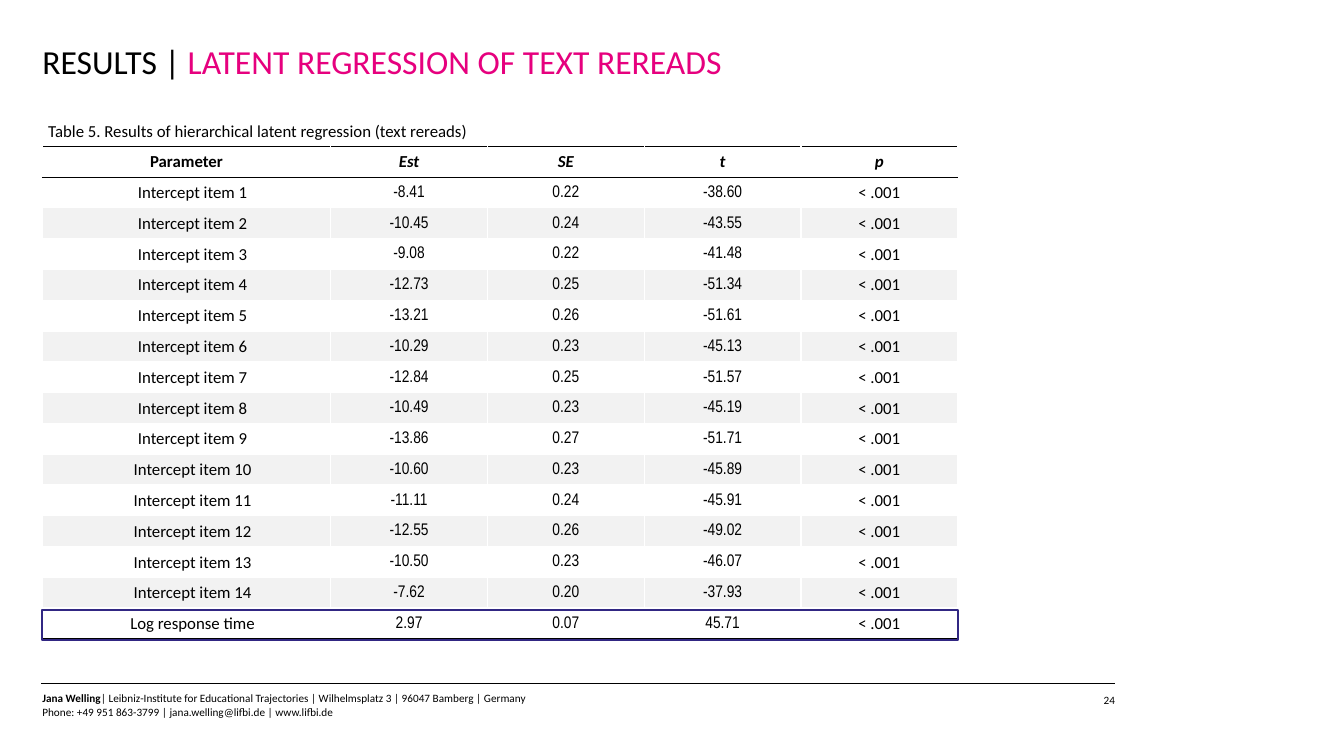
"""Build the results slide on latent regression of text rereads."""
from lxml import etree
from pptx import Presentation
from pptx.dml.color import RGBColor
from pptx.enum.shapes import MSO_CONNECTOR, MSO_SHAPE
from pptx.enum.text import MSO_ANCHOR, PP_ALIGN
from pptx.oxml.ns import qn
from pptx.util import Inches, Pt

LEFT, MID, RIGHT = PP_ALIGN.LEFT, PP_ALIGN.CENTER, PP_ALIGN.RIGHT
CENTER = MSO_ANCHOR.MIDDLE
RECT, LINE = MSO_SHAPE.RECTANGLE, MSO_CONNECTOR.STRAIGHT
BLACK, WHITE, GREY, PINK, BLUE = "000000", "FFFFFF", "F2F2F2", "E6007E", "312783"
SANS, SLIM = "Calibri", "Arial Narrow"
hue = RGBColor.from_string


def write(para, text, size, tint=BLACK, face=SANS, bold=False, slant=False):
    """Add one run."""
    run = para.add_run()
    run.text = text
    font = run.font
    font.size, font.name, font.bold, font.italic = Pt(size), face, bold, slant
    font.color.rgb = hue(tint)


def edge(cell, side, tint, width):
    """Add one border to a cell."""
    line = etree.SubElement(cell._tc.get_or_add_tcPr(), qn("a:ln" + side), w=str(Pt(width)))
    fill = etree.SubElement(line, qn("a:solidFill"))
    etree.SubElement(fill, qn("a:srgbClr"), val=tint)


deck = Presentation()
deck.slide_width, deck.slide_height = Inches(13.33), Inches(7.5)
slide = deck.slides.add_slide(deck.slide_layouts[6])
shapes = slide.shapes

edge_x, top, wide, tall = 0.42, 1.45, 9.08, 4.89

rule = shapes.add_connector(LINE, Inches(0.41), Inches(6.78), Inches(11.06), Inches(6.78))
rule.line.color.rgb = hue(BLACK)
rule.line.width = Pt(0.5)
etree.SubElement(rule._element.spPr, qn("a:effectLst"))

texts = [
    ((10.43, 6.88, 0.63, 0.13), (0, 0), 8, RIGHT, [[("24", BLACK, False)]]),
    ((edge_x, 6.86, 8.13, 0.27), (0, 0), 8, LEFT, [
        [("Jana Welling", BLACK, True),
         ("| Leibniz-Institute for Educational Trajectories | Wilhelmsplatz 3"
          " | 96047 Bamberg | Germany", BLACK, False)],
        [("Phone: +49 951 863-3799 | jana.welling@lifbi.de | www.lifbi.de", BLACK, False)]]),
    ((edge_x, 0.41, 10.65, 0.83), (0, 0), 24, LEFT, [
        [("RESULTS | ", BLACK, False), ("LATENT REGRESSION OF TEXT REREADS", PINK, False)]]),
    ((0.38, 1.15, 6.69, 0.3), (0.1, 0.05), 12, LEFT, [
        [("Table 5. Results of hierarchical latent regression (text rereads)", BLACK, False)]]),
]
for place, (side, end), size, align, paras in texts:
    frame = shapes.add_textbox(*map(Inches, place)).text_frame
    frame.word_wrap = True
    frame.margin_left = frame.margin_right = Inches(side)
    frame.margin_top = frame.margin_bottom = Inches(end)
    for i, runs in enumerate(paras):
        para = frame.add_paragraph() if i else frame.paragraphs[0]
        para.alignment = align
        for text, tint, bold in runs:
            write(para, text, size, tint, bold=bold)

items = [
    ("-8.41", "0.22", "-38.60"), ("-10.45", "0.24", "-43.55"),
    ("-9.08", "0.22", "-41.48"), ("-12.73", "0.25", "-51.34"),
    ("-13.21", "0.26", "-51.61"), ("-10.29", "0.23", "-45.13"),
    ("-12.84", "0.25", "-51.57"), ("-10.49", "0.23", "-45.19"),
    ("-13.86", "0.27", "-51.71"), ("-10.60", "0.23", "-45.89"),
    ("-11.11", "0.24", "-45.91"), ("-12.55", "0.26", "-49.02"),
    ("-10.50", "0.23", "-46.07"), ("-7.62", "0.20", "-37.93"),
]
rows = [("Parameter", "Est", "SE", "t", "p")]
rows += [(f"Intercept item {n}", *vals, "< .001") for n, vals in enumerate(items, 1)]
rows += [("Log response time", "2.97", "0.07", "45.71", "< .001")]
count, cols = len(rows), len(rows[0])

table = shapes.add_table(count, cols, Inches(edge_x), Inches(top), Inches(wide), Inches(tall)).table
table.first_row = table.horz_banding = False
first = 2.86
for c, col in enumerate(table.columns):
    col.width = Inches((wide - first) / (cols - 1) if c else first)

rims = {0: (BLACK, 1), 1: (BLACK, 0.5), count: (BLACK, 1)}
plain = (WHITE, 1)
for r, row in enumerate(rows):
    table.rows[r].height = Inches(tall / count)
    head = r == 0
    for c, text in enumerate(row):
        cell = table.cell(r, c)
        cell.margin_left = cell.margin_right = cell.margin_top = Inches(0.01)
        cell.margin_bottom = 0
        cell.vertical_anchor = CENTER
        for side, rim in zip("LRTB", (plain, plain, rims.get(r, plain), rims.get(r + 1, plain))):
            edge(cell, side, *rim)
        cell.fill.solid()
        cell.fill.fore_color.rgb = hue(GREY if r and r % 2 == 0 else WHITE)
        para = cell.text_frame.paragraphs[0]
        para.alignment = MID
        if c == 0 and not head:
            para._p.get_or_add_pPr().set("marL", str(Inches(0.12)))
        face = SLIM if 0 < c < cols - 1 and not head else SANS
        write(para, text, 12, face=face, bold=head, slant=head and c > 0)

frame = shapes.add_shape(RECT, Inches(edge_x), Inches(6.05), Inches(wide), Inches(0.3))
frame.shadow.inherit = False
frame.fill.background()
frame.line.color.rgb = hue(BLUE)
frame.line.width = Pt(1.5)

deck.save("out.pptx")
